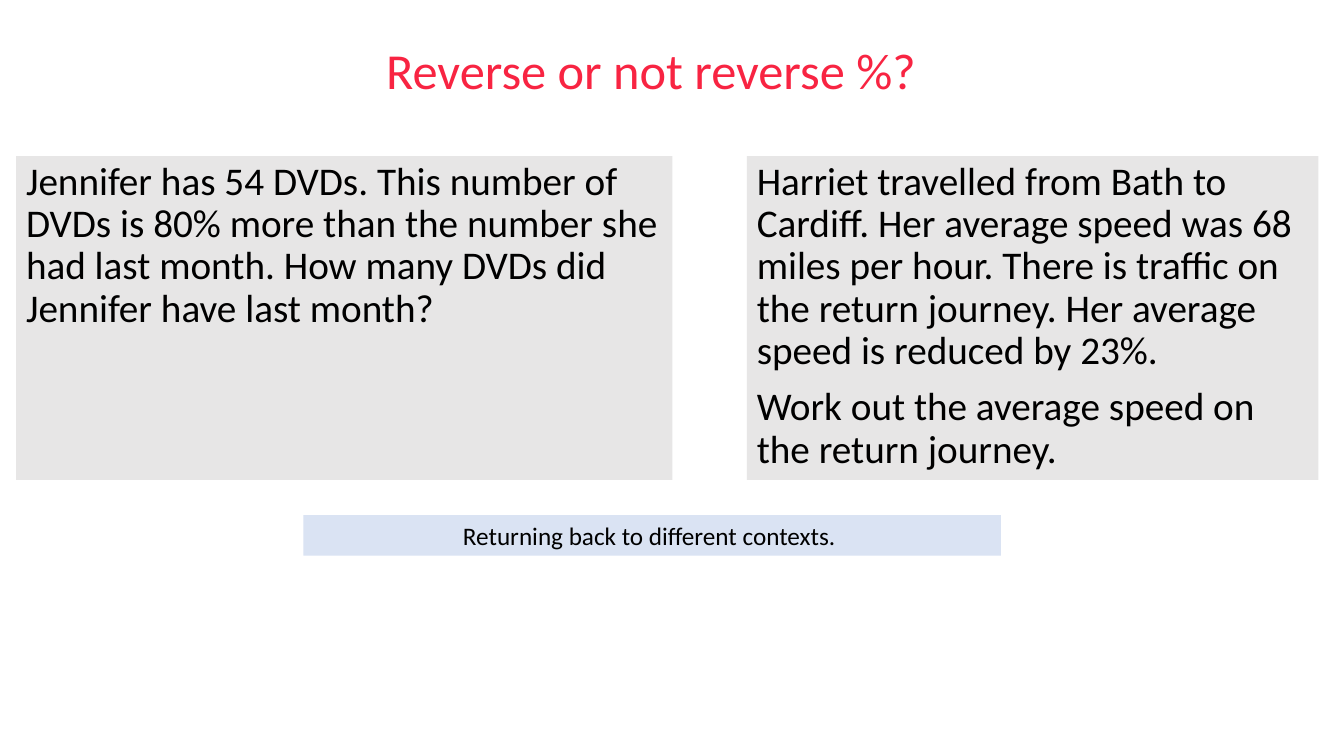
"""Build a slide asking which percentage problems need a reverse calculation."""
from dataclasses import dataclass
from typing import Optional

from pptx import Presentation
from pptx.dml.color import RGBColor
from pptx.enum.text import MSO_ANCHOR, PP_ALIGN
from pptx.slide import Slide
from pptx.util import Pt

LEFT, CENTER = PP_ALIGN.LEFT, PP_ALIGN.CENTER
TOP, MIDDLE = MSO_ANCHOR.TOP, MSO_ANCHOR.MIDDLE


@dataclass(frozen=True)
class Theme:
    """Colours, type sizes and font of the slide."""
    font: str = "Calibri"
    title: str = "F82442"
    text: str = "000000"
    question_fill: str = "E7E6E6"
    note_fill: str = "DAE3F3"
    title_size: float = 36
    question_size: float = 28
    note_size: float = 18


@dataclass(frozen=True)
class Question:
    """A word problem and the horizontal span of its panel."""
    left: float
    width: float
    paragraphs: tuple[str, ...]


THEME = Theme()
QUESTION_TOP, QUESTION_HEIGHT = 111.6, 231.12
QUESTIONS = (
    Question(11.52, 468.72, (
        "Jennifer has 54 DVDs. This number of DVDs is 80% more than the number "
        "she had last month. How many DVDs did Jennifer have last month?",
    )),
    Question(533.52, 408.24, (
        "Harriet travelled from Bath to Cardiff. Her average speed was 68 miles "
        "per hour. There is traffic on the return journey. Her average speed is "
        "reduced by 23%.",
        "Work out the average speed on the return journey.",
    )),
)


def add_text(s: Slide, box: tuple[float, float, float, float], *paragraphs: str,
             size: float, color: str = THEME.text, fill: Optional[str] = None,
             align: PP_ALIGN = LEFT, anchor: MSO_ANCHOR = TOP,
             spacing: float = 1.0, gap: float = 0) -> None:
    """Add a wrapped text box with an optional fill."""
    sp = s.shapes.add_textbox(*(Pt(v) for v in box))
    if fill:
        sp.fill.solid()
        sp.fill.fore_color.rgb = RGBColor.from_string(fill)
    tf = sp.text_frame
    tf.word_wrap = True
    tf.vertical_anchor = anchor
    for i, text in enumerate(paragraphs):
        p = tf.add_paragraph() if i else tf.paragraphs[0]
        p.alignment = align
        p.line_spacing = spacing
        p.space_before = Pt(gap if i else 0)
        r = p.add_run()
        r.text = text
        r.font.name = THEME.font
        r.font.size = Pt(size)
        r.font.color.rgb = RGBColor.from_string(color)


def main() -> None:
    """Build and save the slide."""
    prs = Presentation()
    prs.slide_width, prs.slide_height = Pt(960), Pt(540)
    s = prs.slides.add_slide(prs.slide_layouts[6])
    add_text(s, (51.12, 0, 828, 104.4), "Reverse or not reverse %?",
             size=THEME.title_size, color=THEME.title, align=CENTER,
             anchor=MIDDLE, spacing=0.9)
    for q in QUESTIONS:
        add_text(s, (q.left, QUESTION_TOP, q.width, QUESTION_HEIGHT), *q.paragraphs,
                 size=THEME.question_size, fill=THEME.question_fill,
                 spacing=0.9, gap=10)
    add_text(s, (216.72, 367.92, 498.24, 29.08), "Returning back to different contexts. ",
             size=THEME.note_size, fill=THEME.note_fill, align=CENTER)
    prs.save("out.pptx")


if __name__ == "__main__":
    main()
